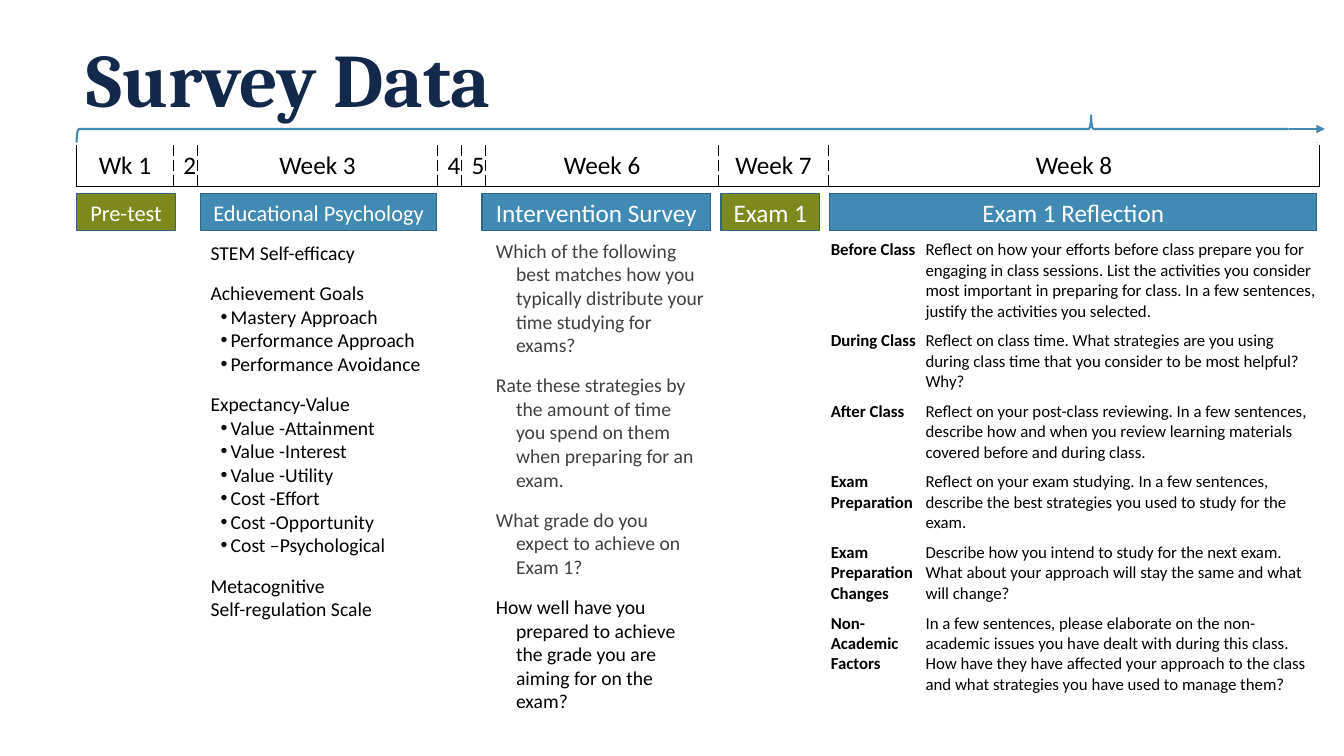
from dataclasses import dataclass

from lxml import etree
from pptx import Presentation
from pptx.dml.color import RGBColor
from pptx.enum.shapes import MSO_CONNECTOR, MSO_SHAPE
from pptx.enum.text import MSO_ANCHOR, PP_ALIGN
from pptx.oxml.ns import qn
from pptx.util import Emu, Inches, Pt

RECTANGLE, BRACE = MSO_SHAPE.RECTANGLE, MSO_SHAPE.LEFT_BRACE
STRAIGHT = MSO_CONNECTOR.STRAIGHT
MIDDLE, TOP = MSO_ANCHOR.MIDDLE, MSO_ANCHOR.TOP
CENTER, LEFT = PP_ALIGN.CENTER, PP_ALIGN.LEFT

NAVY, BLUE, EDGE, OLIVE = "13294B", "418AB3", "306684", "7D891D"
BLACK, GRAY, WHITE = "000000", "404040", "FFFFFF"
NO_STYLE_TABLE = "{2D5ABB26-0587-4C30-8999-92F81FD0307C}"
GRID = Inches(0.1)  # one column or row of the layout grid
HEADING_TOP, HEADING_HEIGHT = 19.2, 3.7
TIMELINE_LEFT, TIMELINE_WIDTH = 7.6, 123


@dataclass
class Heading:
    text: str
    left: float
    width: float
    color: str
    size: int = 18
    side_inset: float = 1


@dataclass
class Item:
    text: str
    color: str = BLACK
    bullet: bool = False
    hanging: float = 0
    space_before: int = 12


WEEKS = [("Wk 1", 9.6), ("2", 2.3), ("Week 3", 23.8), ("4", 2.3), ("5", 2.3),
         ("Week 6", 23.1), ("Week 7", 10.9), ("Week 8", 48.7)]

HEADINGS = [
    Heading("Pre-test", 7.6, 9.8, OLIVE, 16),
    Heading("Educational Psychology", 19.9, 23.4, BLUE, 16, 0),
    Heading("Intervention Survey", 47.8, 22.7, BLUE),
    Heading("Exam 1", 71.5, 9.8, OLIVE),
    Heading("Exam 1 Reflection", 82.3, 48.3, BLUE),
]

SCALES = [
    ("STEM Self-efficacy", []),
    ("Achievement Goals",
     ["Mastery Approach", "Performance Approach", "Performance Avoidance"]),
    ("Expectancy-Value",
     ["Value -Attainment", "Value -Interest", "Value -Utility",
      "Cost -Effort", "Cost -Opportunity", "Cost –Psychological"]),
    ("Metacognitive\vSelf-regulation Scale", []),
]

QUESTIONS = [
    ("Which of the following best matches how you typically distribute your "
     "time studying for exams?", GRAY),
    ("Rate these strategies by the amount of time you spend on them when "
     "preparing for an exam.", GRAY),
    ("What grade do you expect to achieve on Exam 1?", GRAY),
    ("How well have you prepared to achieve the grade you are aiming for on "
     "the exam?", BLACK),
]

REFLECTIONS = [
    ("Before Class", 9,
     "Reflect on how your efforts before class prepare you for engaging in "
     "class sessions. List the activities you consider most important in "
     "preparing for class. In a few sentences, justify the activities you "
     "selected."),
    ("During Class", 7,
     "Reflect on class time. What strategies are you using during class time "
     "that you consider to be most helpful? Why?"),
    ("After Class", 7,
     "Reflect on your post-class reviewing. In a few sentences, describe how "
     "and when you review learning materials covered before and during class."),
    ("Exam Preparation", 7,
     "Reflect on your exam studying. In a few sentences, describe the best "
     "strategies you used to study for the exam."),
    ("Exam Preparation Changes", 7,
     "Describe how you intend to study for the next exam. What about your "
     "approach will stay the same and what will change?"),
    ("Non-Academic Factors", 9,
     "In a few sentences, please elaborate on the non-academic issues you "
     "have dealt with during this class. How have they have affected your "
     "approach to the class and what strategies you have used to manage them?"),
]


def grid(*units: float) -> list[Emu]:
    return [Emu(round(unit * GRID)) for unit in units]


def rgb(color: str) -> RGBColor:
    return RGBColor.from_string(color)


def style(paragraph, size: int, color: str, bold: bool = False,
          font: str = "Calibri", align=LEFT) -> None:
    paragraph.alignment = align
    for run in paragraph.runs:
        run.font.name, run.font.size, run.font.bold = font, Pt(size), bold
        run.font.color.rgb = rgb(color)


def add_box(slide, left: float, top: float, width: float, height: float,
            anchor=TOP):
    frame = slide.shapes.add_textbox(*grid(left, top, width, height)).text_frame
    frame.word_wrap = True
    frame.vertical_anchor = anchor
    return frame


def add_shape(slide, kind, left: float, top: float, width: float, height: float,
              fill: str = "", line: str = "", weight: float = 1):
    shape = slide.shapes.add_shape(kind, *grid(left, top, width, height))
    shape.shadow.inherit = False
    if fill:
        shape.fill.solid()
        shape.fill.fore_color.rgb = rgb(fill)
    else:
        shape.fill.background()
    if line:
        shape.line.color.rgb = rgb(line)
        shape.line.width = Pt(weight)
    else:
        shape.line.fill.background()
    return shape


def add_heading(slide, heading: Heading) -> None:
    shape = add_shape(slide, RECTANGLE, heading.left, HEADING_TOP, heading.width,
                      HEADING_HEIGHT, heading.color, EDGE)
    frame = shape.text_frame
    frame.margin_left, frame.margin_right = grid(*[heading.side_inset] * 2)
    frame.vertical_anchor = MIDDLE
    frame.text = heading.text
    style(frame.paragraphs[0], heading.size, WHITE, align=CENTER)


def add_items(frame, items: list[Item]) -> None:
    for index, item in enumerate(items):
        paragraph = frame.paragraphs[0] if index == 0 else frame.add_paragraph()
        paragraph.text = item.text
        properties = paragraph._p.get_or_add_pPr()
        indent, hanging = grid(2 if item.bullet or item.hanging else 0, item.hanging)
        properties.set("marL", str(indent))
        properties.set("indent", str(-hanging))
        if item.bullet:
            etree.SubElement(properties, qn("a:buFont"), typeface="Arial")
            etree.SubElement(properties, qn("a:buChar"), char="•")
        paragraph.space_before = Pt(item.space_before if index else 0)
        style(paragraph, 14, item.color)


def add_table(slide, left: float, top: float, widths: list[float],
              heights: list[float]):
    area = grid(left, top, sum(widths), sum(heights))
    table = slide.shapes.add_table(len(heights), len(widths), *area).table
    table.first_row = table.horz_banding = False
    table._tbl.tblPr.find(qn("a:tableStyleId")).text = NO_STYLE_TABLE
    for column, width in zip(table.columns, grid(*widths)):
        column.width = width
    for row, height in zip(table.rows, grid(*heights)):
        row.height = height
    return table


def set_borders(cell, dashes: dict[str, str]) -> None:
    properties = cell._tc.get_or_add_tcPr()
    for position, (side, dash) in enumerate(dashes.items()):
        line = etree.Element(qn(f"a:{side}"), w=str(Pt(1)))
        fill = etree.SubElement(line, qn("a:solidFill"))
        etree.SubElement(fill, qn("a:srgbClr"), val=BLACK)
        etree.SubElement(line, qn("a:prstDash"), val=dash)
        properties.insert(position, line)


def add_weeks(slide) -> None:
    table = add_table(slide, TIMELINE_LEFT, 14.4, [width for _, width in WEEKS], [4.1])
    last = len(WEEKS) - 1
    for index, (week, _) in enumerate(WEEKS):
        cell = table.cell(0, index)
        cell.text = week
        style(cell.text_frame.paragraphs[0], 18, BLACK, align=CENTER)
        cell.fill.background()
        set_borders(cell, {"lnL": "solid" if index == 0 else "lgDash",
                           "lnR": "solid" if index == last else "lgDash",
                           "lnB": "solid"})


def add_reflections(slide) -> None:
    table = add_table(slide, 82.4, 23.8, [9.4, 38.9], [rows for _, rows, _ in REFLECTIONS])
    for row, (stage, _, prompt) in enumerate(REFLECTIONS):
        for column, text in enumerate((stage, prompt)):
            cell = table.cell(row, column)
            cell.text = text
            cell.margin_left = cell.margin_right = cell.margin_top = 0
            cell.margin_bottom = GRID
            style(cell.text_frame.paragraphs[0], 12, BLACK, bold=column == 0)
            if column == 0:
                cell.fill.background()
            else:
                cell.fill.solid()
                cell.fill.fore_color.rgb = rgb(WHITE)


def add_time_arrow(slide) -> None:
    # The brace is upright before its quarter turn, so its height spans the weeks
    depth, middle = 2.7, 12.8
    brace = add_shape(slide, BRACE, TIMELINE_LEFT + (TIMELINE_WIDTH - depth) / 2,
                      middle - TIMELINE_WIDTH / 2, depth, TIMELINE_WIDTH,
                      line=BLUE, weight=1.5)
    brace.rotation = 90
    brace.adjustments[0], brace.adjustments[1] = 8.3 / 100, 18.2 / 100
    # The open right end becomes an arrow
    end_cover = add_shape(slide, RECTANGLE, 127.8, middle - depth / 2, 4, depth, WHITE)
    arrow = slide.shapes.add_connector(STRAIGHT, *grid(127.8, middle, 131.4, middle))
    arrow.begin_connect(end_cover, 1)
    arrow.line.color.rgb = rgb(BLUE)
    arrow.line.width = Pt(1.5)
    etree.SubElement(arrow.line._get_or_add_ln(), qn("a:tailEnd"), type="triangle")
    etree.SubElement(arrow._element.spPr, qn("a:effectLst"))


def main() -> None:
    deck = Presentation()
    deck.slide_width, deck.slide_height = grid(133.3, 75)
    slide = deck.slides.add_slide(deck.slide_layouts[6])

    # Title
    title = add_box(slide, 7.6, 2.2, 116.5, 12, MIDDLE)
    title.text = "Survey Data"
    title.paragraphs[0].line_spacing = 0.9
    style(title.paragraphs[0], 54, NAVY, True, "Cambria")

    # Timeline with its headings
    add_weeks(slide)
    for heading in HEADINGS:
        add_heading(slide, heading)

    # Scales, questions and reflection prompts
    scale_items = []
    for scale, parts in SCALES:
        scale_items.append(Item(scale))
        scale_items += [Item(part, bullet=True, hanging=1, space_before=0) for part in parts]
    add_items(add_box(slide, 19.9, 23.4, 23.4, 39), scale_items)
    add_items(add_box(slide, 48.2, 23.2, 22.7, 48.5),
              [Item(question, color, hanging=2) for question, color in QUESTIONS])
    add_reflections(slide)

    add_time_arrow(slide)
    deck.save("out.pptx")


if __name__ == "__main__":
    main()
